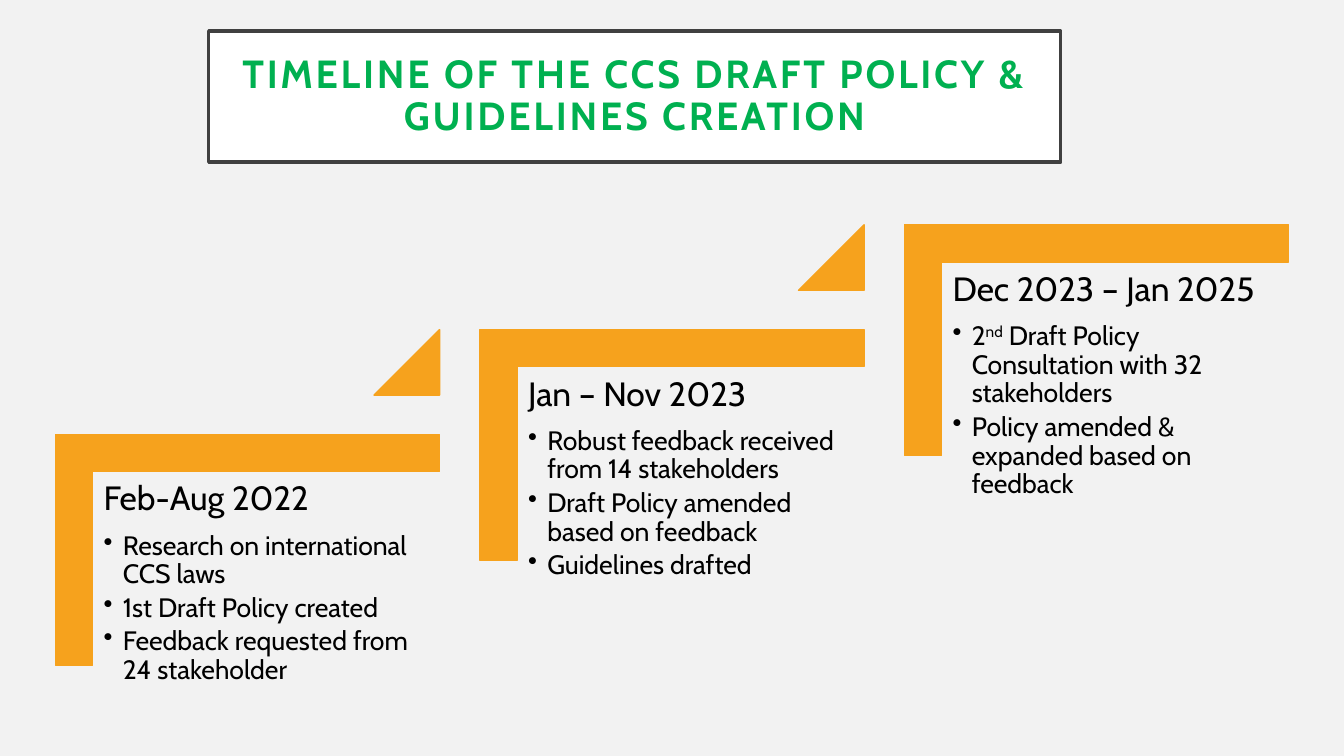
from lxml.etree import SubElement
from pptx import Presentation
from pptx.dml.color import RGBColor
from pptx.enum.shapes import MSO_SHAPE as Preset
from pptx.enum.text import MSO_ANCHOR as Anchor, PP_ALIGN as Align
from pptx.oxml.ns import qn
from pptx.util import Inches, Pt

COLORS = {
    "background": "F2F2F2",
    "panel": "FFFFFF",
    "border": "404040",
    "title": "00B050",
    "step": "F6A21D",
    "text": "000000",
}
FONT = "Cabin"
TITLE = "TIMELINE OF THE CCS DRAFT POLICY & GUIDELINES CREATION"
SUPERSCRIPT = "nd"
STEPS = [
    ("Feb-Aug 2022", [
        ["Research on international CCS laws"],
        ["1st Draft Policy created"],
        ["Feedback requested from 24 stakeholder"],
    ]),
    ("Jan – Nov 2023", [
        ["Robust feedback received from 14 stakeholders"],
        ["Draft Policy amended based on feedback"],
        ["Guidelines drafted"],
    ]),
    ("Dec 2023 – Jan 2025", [
        ["2", SUPERSCRIPT, " Draft Policy Consultation with 32 stakeholders"],
        ["Policy amended & expanded based on feedback"],
    ]),
]
STEP_WIDTH, STEP_HEIGHT = 3.81, 2.29
STEP_ACROSS, STEP_UP = 4.21, 1.04
BAR_RATIO = 0.161
ARROW_SIZE = 0.65


def color(name):
    return RGBColor.from_string(COLORS[name])


def add_block(slide, preset, left, top, width, height, fill, line, weight):
    block = slide.shapes.add_shape(
        preset, Inches(left), Inches(top), Inches(width), Inches(height))
    block.shadow.inherit = False
    block.fill.solid()
    block.fill.fore_color.rgb = color(fill)
    block.line.color.rgb = color(line)
    block.line.width = Pt(weight)
    return block


def set_margins(frame, margin):
    frame.margin_left = frame.margin_right = Inches(margin)
    frame.margin_top = frame.margin_bottom = Inches(margin)
    frame.word_wrap = True


def style_run(run, size, name, bold=False):
    run.font.name = FONT
    run.font.size = Pt(size)
    run.font.bold = bold
    run.font.color.rgb = color(name)


def add_title(slide, left, top, width, height):
    panel = add_block(slide, Preset.RECTANGLE, left, top, width, height,
                      "panel", "border", 2.5)
    frame = panel.text_frame
    set_margins(frame, 0.2)
    frame.vertical_anchor = Anchor.MIDDLE
    frame.text = TITLE
    heading = frame.paragraphs[0]
    heading.alignment = Align.CENTER
    heading.line_spacing = 0.9
    run = heading.runs[0]
    style_run(run, 28, "title", bold=True)
    run._r.get_or_add_rPr().set("spc", "200")


def add_bullet(frame, pieces):
    bullet = frame.add_paragraph()
    bullet.line_spacing = 0.9
    bullet.space_after = Pt(3.4)
    properties = bullet._p.get_or_add_pPr()
    properties.set("marL", str(Inches(0.19)))
    properties.set("indent", str(-Inches(0.19)))
    SubElement(properties, qn("a:buChar")).set("char", "•")
    for piece in pieces:
        run = bullet.add_run()
        run.text = piece
        style_run(run, 19, "text")
        if piece == SUPERSCRIPT:
            run._r.get_or_add_rPr().set("baseline", "30000")


def add_step_text(slide, left, top, width, height, period, bullets):
    notes = slide.shapes.add_textbox(
        Inches(left), Inches(top), Inches(width), Inches(height))
    frame = notes.text_frame
    set_margins(frame, 0.1)
    frame.text = period
    heading = frame.paragraphs[0]
    heading.line_spacing = 0.9
    heading.space_after = Pt(10)
    style_run(heading.runs[0], 24, "text")
    for pieces in bullets:
        add_bullet(frame, pieces)


def add_step(slide, left, top, width, height, period, bullets, has_next):
    turn = (width - height) / 2
    corner = add_block(slide, Preset.CORNER, left + turn, top - turn,
                       height, width, "step", "step", 1)
    corner.rotation = 90
    corner.adjustments[0] = corner.adjustments[1] = BAR_RATIO
    add_step_text(slide, left + 0.38, top + 0.37, 3.44, 3.01, period, bullets)
    if has_next:
        arrow = add_block(slide, Preset.ISOSCELES_TRIANGLE,
                          left + width - ARROW_SIZE, top - STEP_UP,
                          ARROW_SIZE, ARROW_SIZE, "step", "step", 1)
        arrow.adjustments[0] = 1


def add_timeline(slide, left, top):
    for index, (period, bullets) in enumerate(STEPS):
        add_step(slide, left + index * STEP_ACROSS, top - index * STEP_UP,
                 STEP_WIDTH, STEP_HEIGHT, period, bullets,
                 index < len(STEPS) - 1)


def main():
    deck = Presentation()
    deck.slide_width = Inches(13.33)
    deck.slide_height = Inches(7.5)
    slide = deck.slides.add_slide(deck.slide_layouts[6])
    slide.background.fill.solid()
    slide.background.fill.fore_color.rgb = color("background")
    add_title(slide, 2.07, 0.31, 8.45, 1.3)
    add_timeline(slide, 0.55, 4.31)
    deck.save("out.pptx")


if __name__ == "__main__":
    main()
